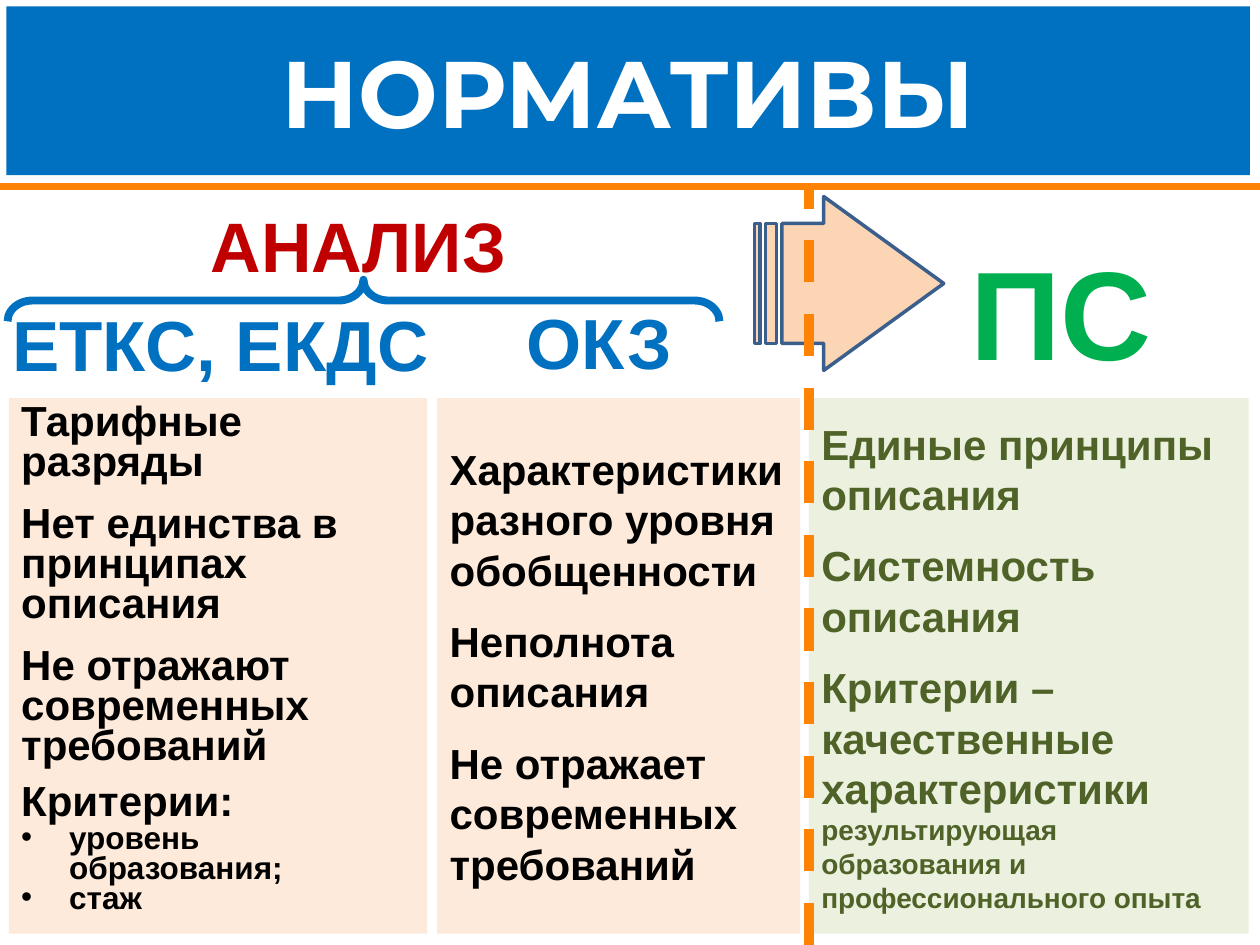
from lxml import etree
from pptx import Presentation
from pptx.dml.color import RGBColor
from pptx.enum import dml, shapes, text
from pptx.oxml import ns
from pptx.util import Inches, Pt

BLUE, ORANGE, PEACH = "0070C0", "FE8304", "FDEADA"
MID, TOP = text.MSO_ANCHOR.MIDDLE, text.MSO_ANCHOR.TOP
LEFT, CENTER = text.PP_ALIGN.LEFT, text.PP_ALIGN.CENTER


def rgb(code):
    return RGBColor.from_string(code)


def write(par, words, size, color, align=LEFT, face="Arial"):
    par.text = words
    par.alignment = align
    font = par.runs[0].font
    font.name, font.size, font.bold = face, Pt(size), True
    font.color.rgb = rgb(color)


prs = Presentation()
prs.slide_width, prs.slide_height = Inches(10), Inches(7.5)
slide = prs.slides.add_slide(prs.slide_layouts[6])
items = slide.shapes

# Striped arrow
arrow = items.add_shape(shapes.MSO_SHAPE.STRIPED_RIGHT_ARROW,
                        Inches(5.99), Inches(1.56), Inches(1.5), Inches(1.38))
arrow.adjustments[0] = arrow.adjustments[1] = 0.69
arrow.shadow.inherit = False
arrow.fill.solid()
arrow.fill.fore_color.rgb = rgb("FCD5B5")
arrow.line.color.rgb = rgb("3A5F8C")
arrow.line.width = Pt(2)

# Headings above the columns
heads = [
    ("ЕТКС, ЕКДС", 0, 2.34, 3.52, 0.78, 40.5, BLUE, LEFT),
    ("ОКЗ", 3.94, 2.32, 1.63, 0.78, 40.5, BLUE, CENTER),
    ("ПС", 7.53, 1.81, 1.78, 1.31, 72, "00B050", CENTER),
    ("АНАЛИЗ", 1.44, 1.56, 2.81, 0.77, 40, "C00000", CENTER),
]
for words, x, y, w, h, size, color, align in heads:
    box = items.add_textbox(Inches(x), Inches(y), Inches(w), Inches(h))
    box.text_frame.word_wrap = True
    write(box.text_frame.paragraphs[0], words, size, color, align)

# Title band and columns: each line is text, size, space before
cols = [
    (0.05, 0.05, 9.87, 1.34, BLUE, "FFFFFF", MID, 1, CENTER, "Montserrat",
     [("НОРМАТИВЫ", 54, 0)]),
    (0.07, 3.16, 3.32, 4.25, PEACH, "000000", TOP, 0.8, LEFT, "Arial",
     [("Тарифные разряды", 24, 0),
      ("Нет единства в принципах описания", 24, 12),
      ("Не отражают современных требований", 24, 12),
      ("Критерии:", 24, 9),
      ("уровень образования;", 18, 0),
      ("стаж", 18, 0)]),
    (3.47, 3.16, 2.88, 4.25, PEACH, "000000", MID, 1, LEFT, "Arial",
     [("Характеристики разного уровня обобщенности", 24, 0),
      ("Неполнота описания", 24, 12),
      ("Не отражает современных требований", 24, 12)]),
    (6.42, 3.16, 3.49, 4.25, "EBF1DE", "4F6228", MID, 1, LEFT, "Arial",
     [("Единые принципы описания", 24, 0),
      ("Системность описания", 24, 12),
      ("Критерии – качественные характеристики", 24, 12),
      ("результирующая образования и профессионального опыта", 16, 0)]),
]
for x, y, w, h, fill, color, anchor, space, align, face, lines in cols:
    rect = items.add_shape(shapes.MSO_SHAPE.RECTANGLE,
                           Inches(x), Inches(y), Inches(w), Inches(h))
    rect.shadow.inherit = False
    rect.fill.solid()
    rect.fill.fore_color.rgb = rgb(fill)
    rect.line.fill.background()
    frame = rect.text_frame
    frame.word_wrap = True
    frame.vertical_anchor = anchor
    for i, (words, size, gap) in enumerate(lines):
        par = frame.add_paragraph() if i else frame.paragraphs[0]
        write(par, words, size, color, align, face)
        par.line_spacing = space
        par.space_before = Pt(gap)
        # Bulleted criteria
        if size == 18:
            props = par._p.get_or_add_pPr()
            props.set("marL", str(Inches(0.38)))
            props.set("indent", str(Inches(-0.38)))
            font = etree.SubElement(props, ns.qn("a:buFont"))
            font.set("typeface", "Arial")
            etree.SubElement(props, ns.qn("a:buChar")).set("char", "•")

# Brace under the analysis heading
brace = items.add_shape(shapes.MSO_SHAPE.RIGHT_BRACE,
                        Inches(2.72), Inches(-0.44), Inches(0.33), Inches(5.65))
brace.rotation = 270
brace.adjustments[0], brace.adjustments[1] = 0.6, 0.5
brace.shadow.inherit = False
brace.fill.background()
brace.line.color.rgb = rgb(BLUE)
brace.line.width = Pt(4.5)

# Orange rule and dashed divider
rules = [(0, 1.48, 10, 1.48, 4.5, None),
         (6.42, 7.5, 6.42, 1.48, 6, dml.MSO_LINE.DASH)]
for x1, y1, x2, y2, width, dash in rules:
    rule = items.add_connector(shapes.MSO_CONNECTOR.STRAIGHT,
                               Inches(x1), Inches(y1), Inches(x2), Inches(y2))
    rule.line.color.rgb = rgb(ORANGE)
    rule.line.width = Pt(width)
    rule.line.dash_style = dash
    etree.SubElement(rule._element.spPr, ns.qn("a:effectLst"))

prs.save("out.pptx")
